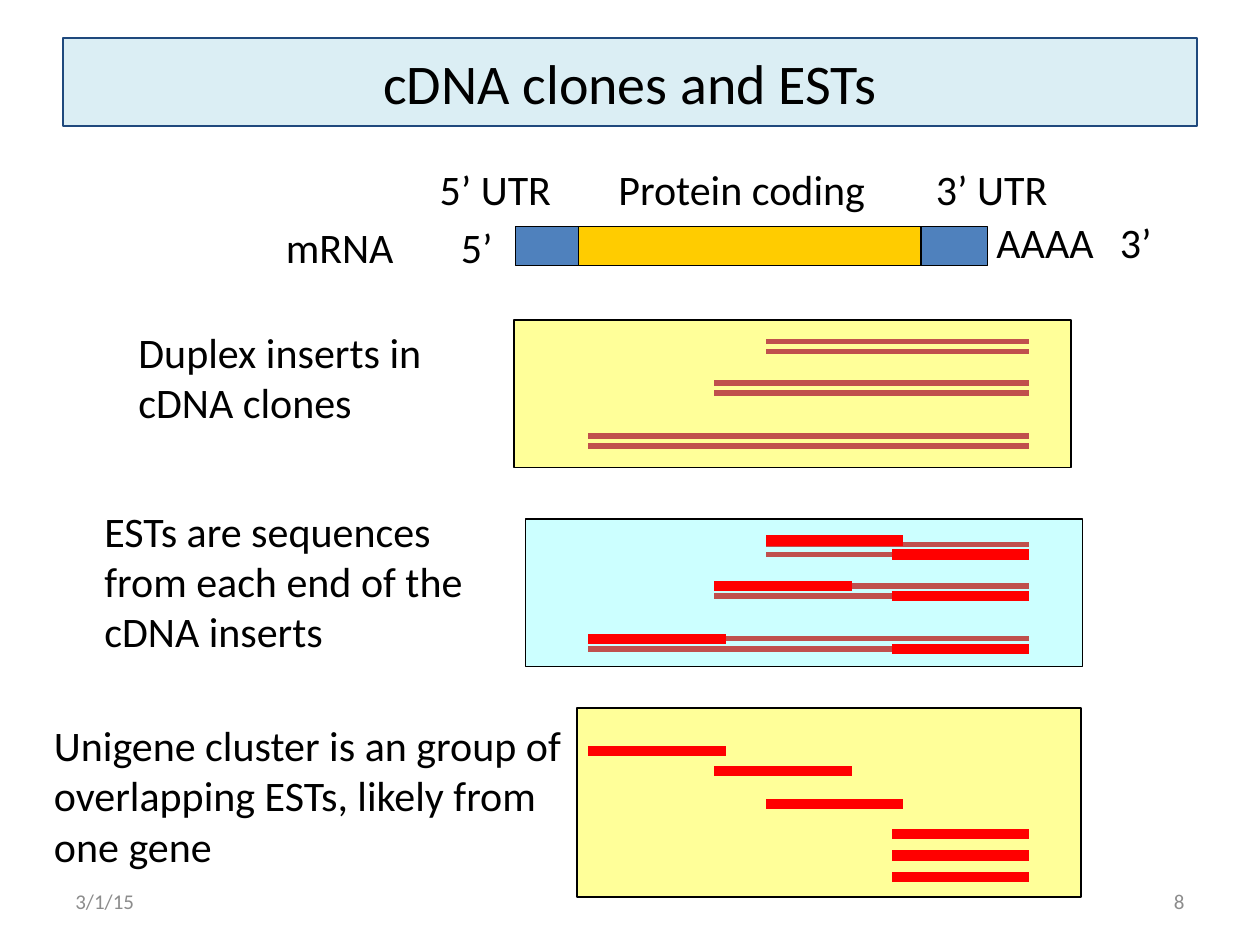
from lxml.etree import SubElement
from pptx import Presentation
from pptx.dml.color import RGBColor
from pptx.enum.shapes import MSO_CONNECTOR, MSO_SHAPE
from pptx.enum.text import MSO_ANCHOR, PP_ALIGN
from pptx.oxml.ns import qn
from pptx.util import Inches, Pt


def rgb(value):
    return RGBColor.from_string(value)


class Painter:
    font = "Calibri"
    black, gray = "000000", "8C8C8C"
    blue, gold = "4F81BD", "FFCC00"
    yellow, cyan = "FFFF99", "CCFFFF"
    strand, est = "C0504D", "FF0000"

    def __init__(self, slide):
        self.s = slide

    def set_text(self, sp, text, size, color, align, anchor):
        tf = sp.text_frame
        tf.text = text
        tf.vertical_anchor = anchor
        p = tf.paragraphs[0]
        p.alignment = align
        font = p.runs[0].font
        font.name, font.size = self.font, Pt(size)
        font.color.rgb = rgb(color)

    def box(self, x, y, w, h, fill, line=black, width=0.75):
        sp = self.s.shapes.add_shape(
            MSO_SHAPE.RECTANGLE, Inches(x), Inches(y), Inches(w), Inches(h))
        sp.shadow.inherit = False
        sp.fill.solid()
        sp.fill.fore_color.rgb = rgb(fill)
        sp.line.color.rgb = rgb(line)
        sp.line.width = Pt(width)
        return sp

    def title(self, text):
        sp = self.box(0.5, 0.3, 9, 0.7, "DBEEF4", "1F497D", 1)
        self.set_text(sp, text, 32, self.black, PP_ALIGN.CENTER,
                      MSO_ANCHOR.MIDDLE)

    def label(self, text, x, y, w, h, wrap=False, size=24, color=black,
              align=PP_ALIGN.LEFT, anchor=MSO_ANCHOR.TOP):
        sp = self.s.shapes.add_textbox(Inches(x), Inches(y), Inches(w), Inches(h))
        sp.text_frame.word_wrap = wrap
        self.set_text(sp, text, size, color, align, anchor)

    def footer(self, text, x, align):
        self.label(text, x, 6.95, 2.33, 0.4, True, 12, self.gray, align,
                   MSO_ANCHOR.MIDDLE)

    def line(self, x1, x2, y, color, width):
        cn = self.s.shapes.add_connector(
            MSO_CONNECTOR.STRAIGHT, Inches(x1), Inches(y), Inches(x2), Inches(y))
        cn.line.color.rgb = rgb(color)
        cn.line.width = Pt(width)
        SubElement(cn._element.spPr, qn("a:effectLst"))

    def duplex(self, x, y):
        for strand_y in (y, y + STRAND_GAP):
            self.line(x, INSERT_END, strand_y, self.strand, 3)

    def est_read(self, x, y):
        self.line(x, x + READ_LENGTH, y, self.est, 6)


INSERT_END = 8.17
STRAND_GAP = 0.08
READ_LENGTH = 1.09
READ_3 = INSERT_END - READ_LENGTH
INSERT_STARTS = (6.08, 5.67, 4.67)

prs = Presentation()
prs.slide_width, prs.slide_height = Inches(10), Inches(7.5)
s = Painter(prs.slides.add_slide(prs.slide_layouts[6]))

s.title("cDNA clones and ESTs")

# mRNA structure
for x, w, fill in ((4.09, 0.53, s.blue), (4.59, 2.75, s.gold),
                   (7.31, 0.53, s.blue)):
    s.box(x, 1.8, w, 0.31, fill)
for text, x, y, w in (
        ("5’ UTR", 3.39, 1.25, 1.18), ("Protein coding", 4.81, 1.25, 2.19),
        ("3’ UTR", 7.33, 1.25, 1.18), ("mRNA", 2.17, 1.71, 1.07),
        ("5’", 3.56, 1.71, 0.54), ("AAAA", 7.81, 1.67, 0.99),
        ("3’", 8.79, 1.67, 0.54)):
    s.label(text, x, y, w, 0.5)

# Duplex inserts
s.label("Duplex inserts in cDNA clones", 1, 2.54, 2.75, 0.91, True)
s.box(4.08, 2.54, 4.42, 1.17, s.yellow)
for x, y in zip(INSERT_STARTS, (2.71, 3.04, 3.46)):
    s.duplex(x, y)

# ESTs from both ends of each insert
s.label("ESTs are sequences from each end of the cDNA inserts",
        0.73, 3.96, 3.35, 1.31, True)
s.box(4.17, 4.12, 4.42, 1.17, s.cyan)
for x, y, est_y in zip(INSERT_STARTS, (4.32, 4.65, 5.07), (4.29, 4.65, 5.07)):
    s.duplex(x, y)
    s.est_read(x, est_y)
    s.est_read(READ_3, y + STRAND_GAP)

# Unigene cluster
s.box(4.58, 5.62, 4, 1.5, s.yellow)
for x, y in zip(INSERT_STARTS + (READ_3,) * 3,
                (6.38, 6.12, 5.96, 6.62, 6.79, 6.96)):
    s.est_read(x, y)
s.label("Unigene cluster is an group of overlapping ESTs, likely from one gene",
        0.33, 5.66, 4.5, 1.31, True)

# Footer
s.footer("3/1/15", 0.5, PP_ALIGN.LEFT)
s.footer("8", 7.17, PP_ALIGN.RIGHT)

prs.save("out.pptx")
